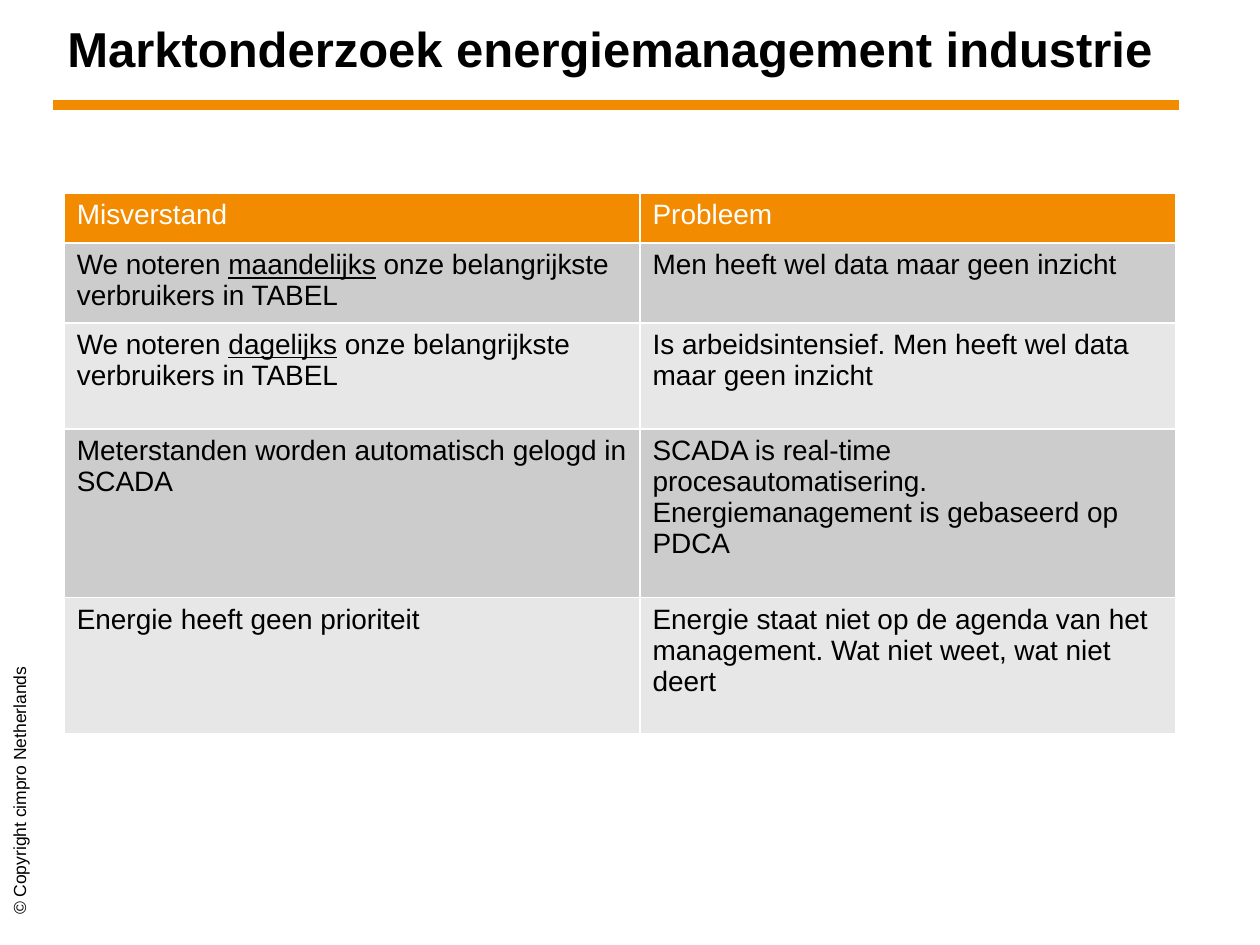
import lxml.etree
import pptx
import pptx.dml.color
import pptx.enum.shapes
import pptx.enum.text
import pptx.oxml.ns
import pptx.util

COLOURS = {
    "accent": "F28B00",
    "ink": "000000",
    "paper": "FFFFFF",
    "odd": "CCCCCC",
    "even": "E7E7E7",
}
FONT = "Arial"
UNITS_PER_INCH = 10  # the grid has 100 columns and 75 rows

HEADINGS = ["Misverstand", "Probleem"]
# Underscores enclose underlined words.
FINDINGS = [
    ["We noteren _maandelijks_ onze belangrijkste verbruikers in TABEL",
     "Men heeft wel data maar geen inzicht"],
    ["We noteren _dagelijks_ onze belangrijkste verbruikers in TABEL",
     "Is arbeidsintensief. Men heeft wel data maar geen inzicht"],
    ["Meterstanden worden automatisch gelogd in SCADA",
     "SCADA is real-time procesautomatisering. "
     "Energiemanagement is gebaseerd op PDCA"],
    ["Energie heeft geen prioriteit",
     "Energie staat niet op de agenda van het management. "
     "Wat niet weet, wat niet deert"],
]


def grid(units):
    return pptx.util.Inches(units / UNITS_PER_INCH)


def colour(name):
    return pptx.dml.color.RGBColor.from_string(COLOURS[name])


def write(frame, text, size=16, ink="ink", bold=False, align="LEFT"):
    """Fill the first paragraph, underlining words between underscores."""
    para = frame.paragraphs[0]
    para.alignment = getattr(pptx.enum.text.PP_ALIGN, align)
    for index, part in enumerate(text.split("_")):
        span = para.add_run()
        span.text = part
        span.font.name = FONT
        span.font.size = pptx.util.Pt(size)
        span.font.bold = bold
        span.font.underline = index % 2 == 1
        span.font.color.rgb = colour(ink)
    # The paragraph mark needs the same size, or it makes the last line taller.
    lxml.etree.SubElement(
        para._p, pptx.oxml.ns.qn("a:endParaRPr"), sz=str(size * 100))


def outline_cell(cell, name="paper", points=1):
    properties = cell._tc.get_or_add_tcPr()
    for side in ("lnL", "lnR", "lnT", "lnB"):
        border = lxml.etree.SubElement(
            properties, pptx.oxml.ns.qn(f"a:{side}"), w=str(pptx.util.Pt(points)))
        fill = lxml.etree.SubElement(border, pptx.oxml.ns.qn("a:solidFill"))
        lxml.etree.SubElement(
            fill, pptx.oxml.ns.qn("a:srgbClr"), val=COLOURS[name])


class SlideBuilder:
    """Places styled elements on the page by grid columns and rows."""

    def __init__(self, deck):
        self.page = deck.slides.add_slide(deck.slide_layouts[6])
        self.page.background.fill.solid()
        self.page.background.fill.fore_color.rgb = colour("paper")

    def text(self, words, left, top, width, height, rotation=0,
             anchor="TOP", **style):
        box = self.page.shapes.add_textbox(*map(grid, (left, top, width, height)))
        box.rotation = rotation
        box.text_frame.word_wrap = True
        box.text_frame.vertical_anchor = getattr(
            pptx.enum.text.MSO_ANCHOR, anchor)
        write(box.text_frame, words, **style)

    def rule(self, left, right, row, points):
        line = self.page.shapes.add_connector(
            pptx.enum.shapes.MSO_CONNECTOR.STRAIGHT,
            *map(grid, (left, row, right, row)))
        line.line.color.rgb = colour("accent")
        line.line.width = pptx.util.Pt(points)
        lxml.etree.SubElement(
            line._element.spPr, pptx.oxml.ns.qn("a:effectLst"))

    def table(self, rows, left, top, widths, heights):
        table = self.page.shapes.add_table(
            len(rows), len(widths),
            *map(grid, (left, top, sum(widths), sum(heights)))).table
        for column, width in zip(table.columns, widths):
            column.width = grid(width)
        for number, (row, height) in enumerate(zip(rows, heights)):
            table.rows[number].height = grid(height)
            band = "accent" if number == 0 else ("even", "odd")[number % 2]
            for cell, words in zip(table.rows[number].cells, row):
                outline_cell(cell)
                cell.fill.solid()
                cell.fill.fore_color.rgb = colour(band)
                write(cell.text_frame, words,
                      ink="ink" if number else "paper")


def main():
    deck = pptx.Presentation()
    deck.slide_width, deck.slide_height = grid(100), grid(75)
    slide = SlideBuilder(deck)
    slide.rule(4.2, 93.6, row=8.35, points=6)
    slide.text("© Copyright cimpro Netherlands", -11.5, 59.1, 26.2, 2.8,
               rotation=270, size=10)
    slide.text("Marktonderzoek energiemanagement industrie", 3.5, 0.8, 89.8, 5.8,
               anchor="BOTTOM", size=28, bold=True, align="CENTER")
    slide.table([HEADINGS] + FINDINGS, 5.1, 15.3, widths=[45.7, 42.5],
                heights=[4, 5.9, 8.4, 13.4, 10.8])
    deck.save("out.pptx")


if __name__ == "__main__":
    main()
